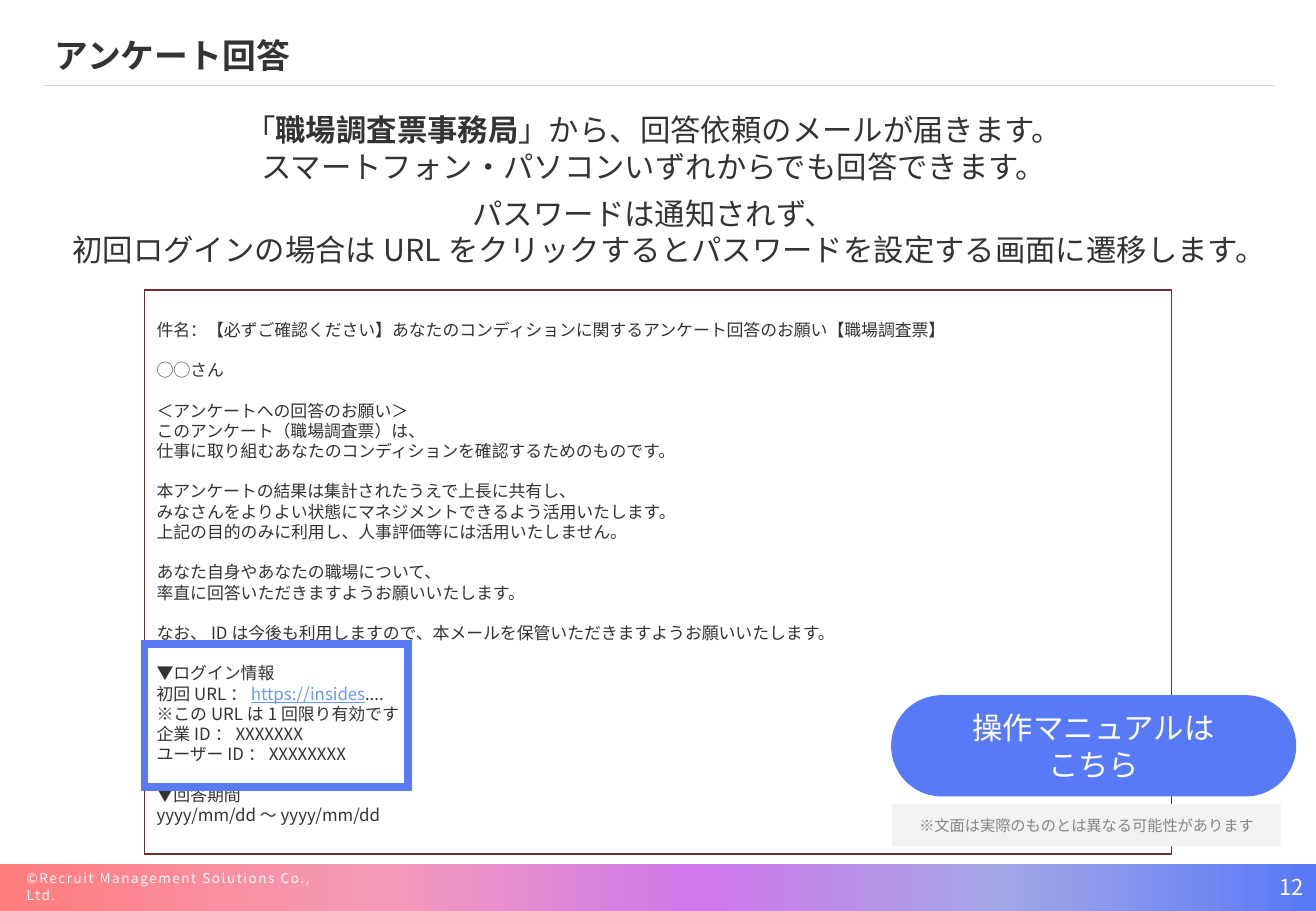
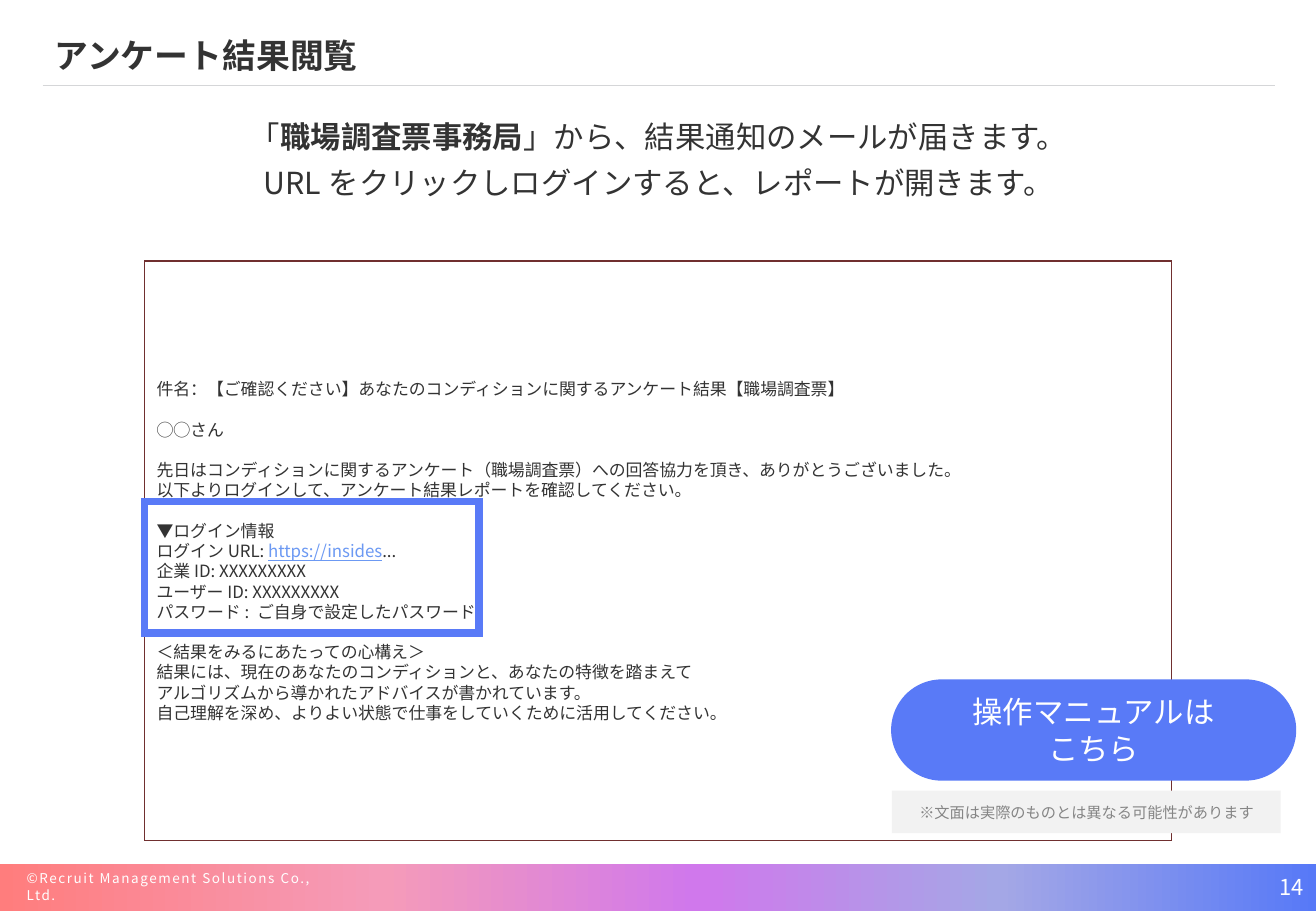
from dataclasses import dataclass

from lxml.etree import SubElement
from pptx import Presentation
from pptx.dml.color import RGBColor
from pptx.enum.shapes import MSO_CONNECTOR as Connector, MSO_SHAPE as Shape
from pptx.enum.text import MSO_ANCHOR as Anchor, PP_ALIGN as Align
from pptx.oxml import parse_xml
from pptx.oxml.ns import nsdecls, qn
from pptx.util import Emu, Pt

PX = 9144  # 100 px to the inch
SLIDE_SIZE = (1083, 750)


@dataclass(frozen=True)
class Theme:
    font: str = "Noto Sans CJK SC"
    text: str = "333333"
    white: str = "FFFFFF"
    accent: str = "597AF7"
    link: str = "6C99F3"
    mail_border: str = "702F2F"
    note_fill: str = "F2F2F2"
    note_text: str = "858585"
    rule: str = "D5D6D8"
    band: tuple = ((0, "FF7D7D"), (29, "F59BB9"), (53, "D078EC"),
                   (76, "A4A7E6"), (100, "5779F7"))
    title_size: int = 20
    lead_size: int = 18
    page_size: int = 13
    mail_size: int = 10
    note_size: int = 9
    footer_size: int = 8
    line_height: float = 1.2


THEME = Theme()

BOLD = {"bold": True}
LINK = {"color": THEME.link, "underline": True}
SENDER = ("職場調査票事務局", BOLD)
URL = ("https://insides", LINK)

COPYRIGHT = "©Recruit Management Solutions Co., Ltd."
NOTE = "※文面は実際のものとは異なる可能性があります"
MANUAL = ["操作マニュアルは", "こちら"]

# A paragraph is a string or a list of runs; a run is a string or (string, format).
# A mail is a list of blocks, each a list of paragraphs.
SLIDES = [
    {
        "title": "アンケート回答",
        "page": "12",
        "lead": [
            ["「", SENDER, "」から、回答依頼のメールが届きます。\n"
             "スマートフォン・パソコンいずれからでも回答できます。"],
            "パスワードは通知されず、\n"
            "初回ログインの場合はURLをクリックするとパスワードを設定する画面に遷移します。",
        ],
        "lead_box": (42, 87, 992, 140),
        "mail": [
            ["件名：【必ずご確認ください】あなたのコンディションに関するアンケート回答のお願い【職場調査票】"],
            ["◯◯さん"],
            ["＜アンケートへの回答のお願い＞",
             "このアンケート（職場調査票）は、",
             "仕事に取り組むあなたのコンディションを確認するためのものです。"],
            ["本アンケートの結果は集計されたうえで上長に共有し、",
             "みなさんをよりよい状態にマネジメントできるよう活用いたします。",
             "上記の目的のみに利用し、人事評価等には活用いたしません。"],
            ["あなた自身やあなたの職場について、",
             "率直に回答いただきますようお願いいたします。"],
            ["なお、IDは今後も利用しますので、本メールを保管いただきますようお願いいたします。"],
            ["▼ログイン情報",
             ["初回URL：", URL, "...."],
             "※このURLは1回限り有効です",
             "企業ID：XXXXXXX",
             "ユーザーID：XXXXXXXX"],
            ["▼回答期間", "yyyy/mm/dd～yyyy/mm/dd"],
        ],
        "mail_box": (119, 239, 845, 464),
        "login_box": (119, 530, 217, 118),
        "manual_top": 573,
        "note_top": 662,
    },
    {
        "title": "アンケート結果閲覧",
        "page": "14",
        "lead": [
            ["「", SENDER, "」から、結果通知のメールが届きます。"],
            "URLをクリックしログインすると、レポートが開きます。",
        ],
        "lead_box": (30, 92, 1024, 79),
        "mail": [
            ["件名：【ご確認ください】あなたのコンディションに関するアンケート結果【職場調査票】"],
            ["◯◯さん"],
            ["先日はコンディションに関するアンケート（職場調査票）への回答協力を頂き、ありがとうございました。",
             "以下よりログインして、アンケート結果レポートを確認してください。"],
            ["▼ログイン情報",
             ["ログインURL: ", URL, "..."],
             "企業ID: XXXXXXXXX",
             "ユーザーID: XXXXXXXXX",
             "パスワード: ご自身で設定したパスワード"],
            ["＜結果をみるにあたっての心構え＞",
             "結果には、現在のあなたのコンディションと、あなたの特徴を踏まえて",
             "アルゴリズムから導かれたアドバイスが書かれています。",
             "自己理解を深め、よりよい状態で仕事をしていくために活用してください。"],
        ],
        "mail_box": (119, 215, 845, 477),
        "login_box": (119, 413, 275, 108),
        "manual_top": 560,
        "note_top": 651,
    },
]


def emu(box):
    return [Emu(length * PX) for length in box]


def rgb(color):
    return RGBColor.from_string(color)


def add_run(paragraph, text, size, color=THEME.text, bold=False, underline=False, spacing=0):
    run = paragraph.add_run()
    run.text = text
    font = run.font
    font.size, font.bold, font.underline = Pt(size), bold, underline
    font.color.rgb = rgb(color)
    font.name = THEME.font
    properties = run.font._element
    SubElement(properties, qn("a:ea")).set("typeface", THEME.font)
    if spacing:
        properties.set("spc", str(spacing))


def write(shape, paragraphs, size, align=Align.LEFT, anchor=Anchor.MIDDLE, gaps=None, **style):
    """Fill a shape with text; gaps maps a paragraph's index to its space before, in points."""
    frame = shape.text_frame
    frame.word_wrap = True
    frame.vertical_anchor = anchor
    for index, content in enumerate(paragraphs):
        paragraph = frame.paragraphs[0] if index == 0 else frame.add_paragraph()
        paragraph.alignment = align
        paragraph.line_spacing = Pt(size * THEME.line_height)
        paragraph.space_before = Pt((gaps or {}).get(index, 0))
        for run in [content] if isinstance(content, str) else content:
            text, extra = (run, {}) if isinstance(run, str) else run
            for number, line in enumerate(text.split("\n")):
                if number:
                    paragraph.add_line_break()
                add_run(paragraph, line, size, **{**style, **extra})


def add_box(slide, box, kind=Shape.RECTANGLE, fill=None, line=None, width=1):
    shape = slide.shapes.add_shape(kind, *emu(box))
    shape.shadow.inherit = False
    if fill:
        shape.fill.solid()
        shape.fill.fore_color.rgb = rgb(fill)
    else:
        shape.fill.background()
    if line:
        shape.line.color.rgb = rgb(line)
        shape.line.width = Pt(width)
        SubElement(shape.element.spPr.get_or_add_ln(), qn("a:miter")).set("lim", "800000")
    else:
        shape.line.fill.background()
    return shape


def add_text(slide, box, paragraphs, size, **style):
    write(slide.shapes.add_textbox(*emu(box)), paragraphs, size, **style)


def set_gradient(shape, stops):
    gradient = parse_xml(f'<a:gradFill {nsdecls("a")}><a:gsLst/><a:lin ang="0" scaled="0"/></a:gradFill>')
    for position, color in stops:
        stop = SubElement(gradient[0], qn("a:gs"), pos=str(position * 1000))
        SubElement(stop, qn("a:srgbClr"), val=color)
    properties = shape.element.spPr
    properties.replace(properties.find(qn("a:noFill")), gradient)


def decorate_layout(layout, slide):
    """Draw the shared parts on a slide, then move them to its layout."""
    for placeholder in list(layout.placeholders):
        if placeholder.placeholder_format.idx:
            layout.shapes.element.remove(placeholder.element)
    before = len(slide.shapes)
    band = add_box(slide, (0, 711, SLIDE_SIZE[0], 39))
    set_gradient(band, THEME.band)
    rule = slide.shapes.add_connector(Connector.STRAIGHT, *emu((35, 70, 1049, 70)))
    rule.line.color.rgb = rgb(THEME.rule)
    rule.line.width = Pt(0.5)
    SubElement(rule.element.spPr, qn("a:effectLst"))
    add_text(slide, (12, 718, 269, 24), [COPYRIGHT], THEME.footer_size,
             color=THEME.white, spacing=90)
    for shape in list(slide.shapes)[before:]:
        layout.shapes.element.append(shape.element)


def add_mail(slide, box, blocks):
    gaps, paragraphs = {}, []
    for block in blocks:
        if paragraphs:
            gaps[len(paragraphs)] = THEME.mail_size * THEME.line_height
        paragraphs += block
    write(add_box(slide, box, line=THEME.mail_border), paragraphs, THEME.mail_size, gaps=gaps)


def fill_slide(slide, content):
    title = slide.shapes.title
    title.left, title.top, title.width, title.height = emu((35, 15, 934, 60))
    write(title, [content["title"]], THEME.title_size, bold=True)
    add_text(slide, (839, 710, 244, 40), [content["page"]], THEME.page_size,
             align=Align.RIGHT, color=THEME.white)
    add_text(slide, content["lead_box"], content["lead"], THEME.lead_size,
             align=Align.CENTER, anchor=Anchor.TOP, gaps={1: 6})
    add_mail(slide, content["mail_box"], content["mail"])
    add_box(slide, content["login_box"], line=THEME.accent, width=4.5)
    note = add_box(slide, (734, content["note_top"], 320, 35), fill=THEME.note_fill)
    write(note, [NOTE], THEME.note_size, align=Align.CENTER, color=THEME.note_text)
    manual = add_box(slide, (734, content["manual_top"], 332, 82), Shape.ROUNDED_RECTANGLE,
                     fill=THEME.accent, line=THEME.accent)
    manual.adjustments[0] = 0.5
    write(manual, MANUAL, THEME.lead_size, align=Align.CENTER, color=THEME.white)


def main():
    presentation = Presentation()
    presentation.slide_width, presentation.slide_height = emu(SLIDE_SIZE)
    layout = presentation.slide_layouts.get_by_name("Title Only")
    slides = [presentation.slides.add_slide(layout) for _ in SLIDES]
    decorate_layout(layout, slides[0])
    for slide, content in zip(slides, SLIDES):
        fill_slide(slide, content)
    presentation.save("out.pptx")


if __name__ == "__main__":
    main()
